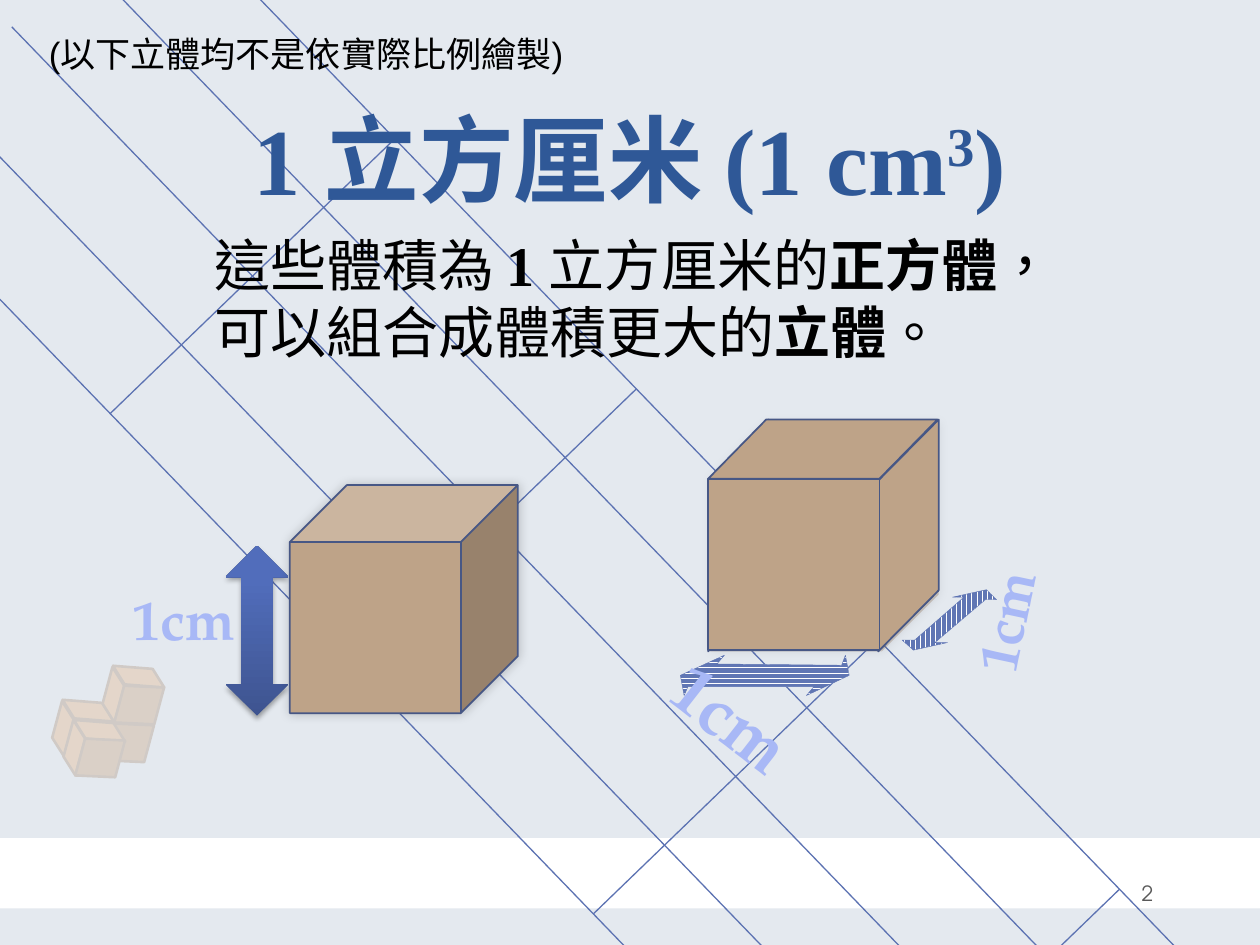
import math
import pptx
import pptx.util
import pptx.dml.color
import pptx.enum.dml
import pptx.enum.shapes
import pptx.enum.text
import pptx.oxml
import pptx.oxml.ns

Inches = pptx.util.Inches
Pt = pptx.util.Pt
Shape = pptx.enum.shapes.MSO_SHAPE
Align = pptx.enum.text.PP_ALIGN
Anchor = pptx.enum.text.MSO_ANCHOR
Hatch = pptx.enum.dml.MSO_PATTERN
qn = pptx.oxml.ns.qn
NS = pptx.oxml.ns.nsdecls("a")


def rgb(code):
    return pptx.dml.color.RGBColor.from_string(code)


class Deck:
    pale = "E4E9EF"
    wood = "BEA388"
    edge = "475785"
    rule = "5C72B2"
    label = "A8B8F6"

    def __init__(self, slide):
        self.slide = slide

    def paint(self, item, fill, line=None, width=1, alpha=None):
        item.shadow.inherit = False
        if fill:
            item.fill.solid()
            item.fill.fore_color.rgb = rgb(fill)
        if alpha:
            tone = item._element.spPr.find(qn("a:solidFill")).find(qn("a:srgbClr"))
            tone.append(pptx.oxml.parse_xml(f'<a:alpha {NS} val="{alpha * 1000}"/>'))
        if line:
            item.line.color.rgb = rgb(line)
            item.line.width = Pt(width)
        else:
            item.line.fill.background()

    def shape(self, kind, box, fill, line=None, width=1, alpha=None, turn=0, flip="", adj=None):
        item = self.slide.shapes.add_shape(kind, *map(Inches, box))
        self.paint(item, fill, line, width, alpha)
        item.rotation = turn
        if adj is not None:
            item.adjustments[0] = adj
        for axis in flip:
            item._element.spPr.xfrm.set("flip" + axis, "1")
        return item

    def slant(self, box, fill, line, width=1, **more):
        return self.shape(Shape.PARALLELOGRAM, box, fill, line, width, **more)

    def shade(self, item, alpha, blur, dist, angle):
        effect = item._element.spPr.find(qn("a:effectLst"))
        effect.append(pptx.oxml.parse_xml(
            f'<a:outerShdw {NS} blurRad="{Pt(blur)}" dist="{Pt(dist)}" dir="{angle * 60000}" rotWithShape="0">'
            f'<a:srgbClr val="000000"><a:alpha val="{alpha * 1000}"/></a:srgbClr></a:outerShdw>'))

    def line(self, start, end):
        item = self.slide.shapes.add_connector(
            pptx.enum.shapes.MSO_CONNECTOR.STRAIGHT, *map(Inches, (*start, *end)))
        item.line.color.rgb = rgb(self.rule)
        item.line.width = Pt(0.75)
        item._element.spPr.append(pptx.oxml.parse_xml(f"<a:effectLst {NS}/>"))

    def arrow(self, points, hatch):
        form = self.slide.shapes.build_freeform(*points[0], scale=Inches(0.01))
        form.add_line_segments(points[1:])
        item = form.convert_to_shape()
        self.paint(item, None, self.rule, 0.25)
        item.fill.patterned()
        item.fill.pattern = hatch
        item.fill.fore_color.rgb = rgb("6076B4")
        item.fill.back_color.rgb = rgb("FFFFFF")

    def words(self, frame, runs, size, color, align=Align.LEFT, space=None):
        para = frame.paragraphs[0]
        para.alignment = align
        if space:
            para.line_spacing = space
        for text, face, bold, base in runs:
            run = para.add_run()
            run.text = text
            run.font.name = face
            run.font.size = Pt(size)
            run.font.bold = bold
            run.font.color.rgb = rgb(color)
            mark = run._r.get_or_add_rPr()
            mark.set("lang", "zh-HK")
            if base:
                mark.set("baseline", str(base * 1000))

    def text(self, box, runs, size, color, inset=None, anchor=Anchor.TOP, turn=0, **more):
        item = self.slide.shapes.add_textbox(*map(Inches, box))
        item.rotation = turn
        frame = item.text_frame
        frame.word_wrap = True
        frame.vertical_anchor = anchor
        if inset is not None:
            frame.margin_left = frame.margin_right = Inches(inset)
            frame.margin_top = frame.margin_bottom = Inches(inset)
        self.words(frame, runs, size, color, **more)

    def size(self, left, top, points, turn):
        self.text((left, top, 1.12, 0.79), [("1cm", "TeX Gyre Pagella", True, 0)], points, self.label,
                  inset=0.01, anchor=Anchor.MIDDLE, turn=turn, align=Align.CENTER, space=0.9)

    def title(self, box, runs, size, color):
        item = self.slide.shapes.title
        item.left, item.top, item.width, item.height = map(Inches, box)
        item.text_frame.vertical_anchor = Anchor.BOTTOM
        self.words(item.text_frame, runs, size, color, Align.CENTER, Pt(58))
        self.slide.shapes._spTree.append(item._element)


def blocks(deck):
    parts = {
        "side": ((0.42, 0.13), "E68422", 105, "HV", 0.92),
        "top": ((0.42, 0.14), "E68422", 184.5, "V", 0.74),
        "face": ((0.37, 0.31), "B26314", 105, "H", 0.22),
    }
    for name, left, top in (
        ("side", 0.29, 5.72), ("top", 0.49, 5.57), ("side", 0.69, 5.45),
        ("top", 0.89, 5.3), ("face", 0.84, 5.74), ("top", 0.58, 5.73),
        ("side", 0.38, 5.87), ("face", 0.61, 5.86), ("face", 0.92, 5.44),
    ):
        size, fill, turn, flip, adj = parts[name]
        deck.slant((left, top, *size), fill, "77420D", 1.5, turn=turn, flip=flip, adj=adj)
    deck.shape(Shape.RECTANGLE, (0, 3.84, 1.5, 2.63), deck.pale, alpha=82)


def grid(deck):
    angle = math.radians(46)

    def spin(x, y):
        return (4.88 + x * math.cos(angle) - y * math.sin(angle),
                5.17 + x * math.sin(angle) + y * math.cos(angle))

    for step in range(4):
        x = 2.76 * (step - 1.5)
        deck.line(spin(x, -1.57), spin(x, 1.57))
    for step in range(-2, 3):
        y = 1.57 * step / 2
        deck.line(spin(-6.89, y), spin(6.89, y))


def cubes(deck):
    wood, edge = deck.wood, deck.edge
    deck.slant((4.94, 4.01, 1.84, 0.48), wood, edge, turn=90, flip="V", adj=1.02)
    deck.slant((5.63, 4.69, 1.81, 0.47), wood, edge, adj=0.98)
    deck.shape(Shape.RECTANGLE, (6.09, 3.33, 1.36, 1.36), wood, edge)
    glass = deck.shape(Shape.CUBE, (5.64, 3.36, 1.81, 1.81), wood, alpha=40)
    deck.shade(glass, 20, 6, 0, 315)
    deck.slant((6.29, 4.01, 1.84, 0.48), wood, edge, turn=90, flip="V", adj=1.01)
    deck.slant((5.62, 3.33, 1.82, 0.47), wood, edge, adj=0.98)
    deck.shape(Shape.RECTANGLE, (5.62, 3.8, 1.36, 1.36), wood, edge)
    deck.arrow([(716, 508), (725, 516), (752, 510), (742, 510), (782, 476),
                (791, 476), (783, 468), (756, 474), (765, 474), (726, 508)], Hatch.DARK_VERTICAL)
    deck.arrow([(575, 520), (540, 536), (543, 552), (546, 545), (646, 545),
                (640, 552), (674, 536), (671, 520), (668, 528), (569, 527)], Hatch.DARK_HORIZONTAL)
    deck.size(5.23, 5.32, 40, 38)
    deck.size(7.44, 4.54, 32, -78)
    tall = deck.shape(Shape.UP_DOWN_ARROW, (1.79, 4.33, 0.5, 1.35), None)
    tall.fill.gradient()
    tall.fill.gradient_angle = 90
    for stop, code, place in zip(tall.fill.gradient_stops, ("3E5490", "516DBB"), (0, 0.8)):
        stop.color.rgb = rgb(code)
        stop.position = place
    deck.shade(tall, 35, 3.1, 1.8, 90)
    solid = deck.shape(Shape.CUBE, (2.3, 3.85, 1.81, 1.81), wood, edge)
    deck.shade(solid, 20, 6, 0, 315)
    deck.size(0.9, 4.54, 32, 0)


def main():
    show = pptx.Presentation()
    show.slide_width, show.slide_height = Inches(10), Inches(7.5)
    deck = Deck(show.slides.add_slide(show.slide_layouts[5]))
    for top, height in ((7.21, 0.29), (0, 6.65)):
        deck.shape(Shape.RECTANGLE, (0, top, 10, height), deck.pale)
    blocks(deck)
    grid(deck)
    roman, sans = "Times New Roman", "Arial"
    deck.title((0.5, 0, 9, 1.75), [
        ("1 立方厘米 (1 cm", roman, True, 0), ("3", roman, True, 30), (")", roman, True, 0)], 54, "2F5897")
    deck.text((9.03, 6.89, 0.61, 0.4), [("2", "TeX Gyre Adventor", False, 0)], 12, "595959",
              inset=0.03, anchor=Anchor.MIDDLE)
    cubes(deck)
    deck.text((1.6, 1.78, 6.95, 1.18), [
        ("這些體積為 ", sans, False, 0), ("1 ", roman, True, 0), ("立方厘米的", sans, False, 0),
        ("正方體", sans, True, 0), ("，可以組合成體積更大的", sans, False, 0),
        ("立體", sans, True, 0), ("。", sans, False, 0)], 32, "000000")
    deck.text((0.29, 0.21, 4.31, 0.44), [("(以下立體均不是依實際比例繪製)", sans, False, 0)], 20, "000000")
    show.save("out.pptx")


if __name__ == "__main__":
    main()
